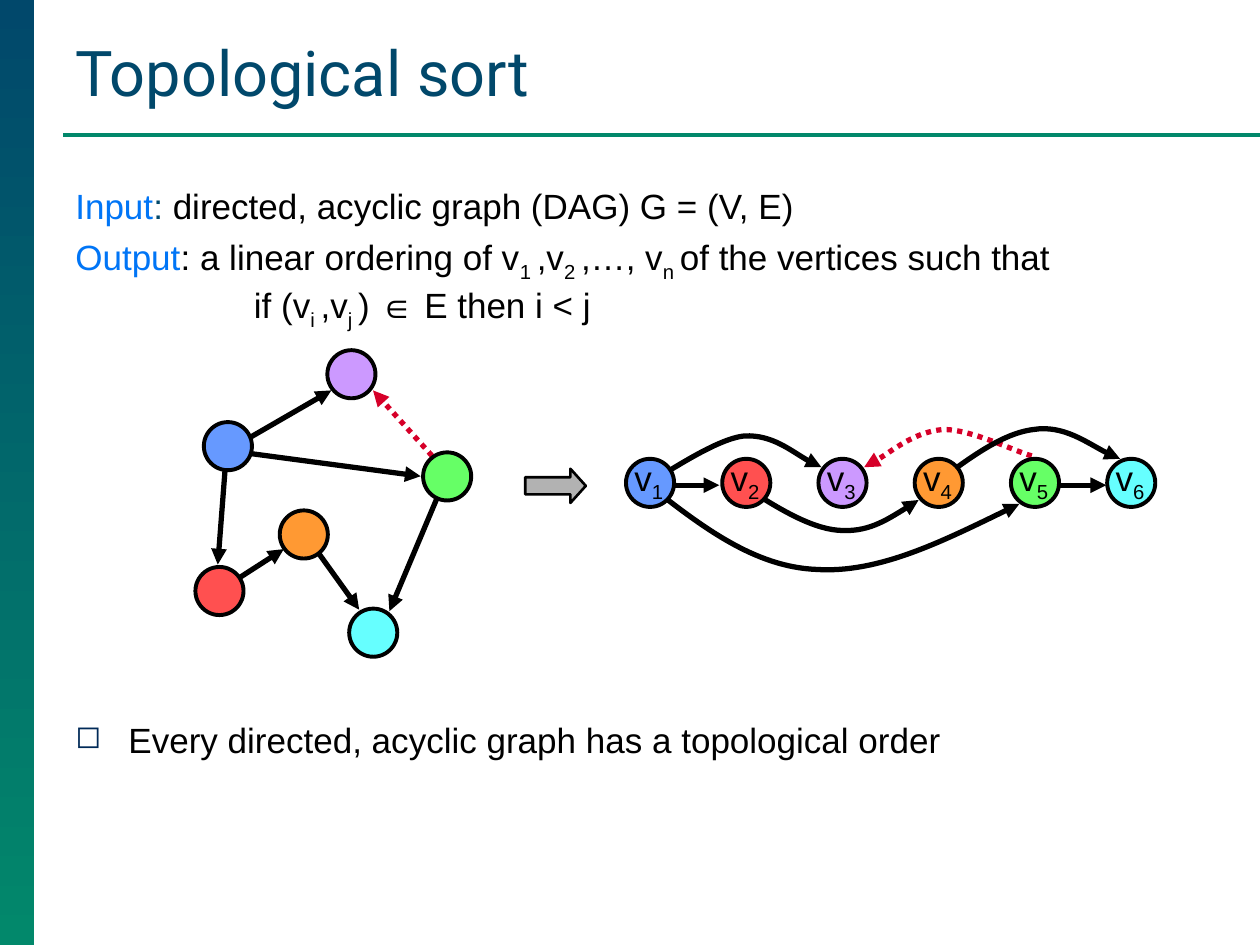
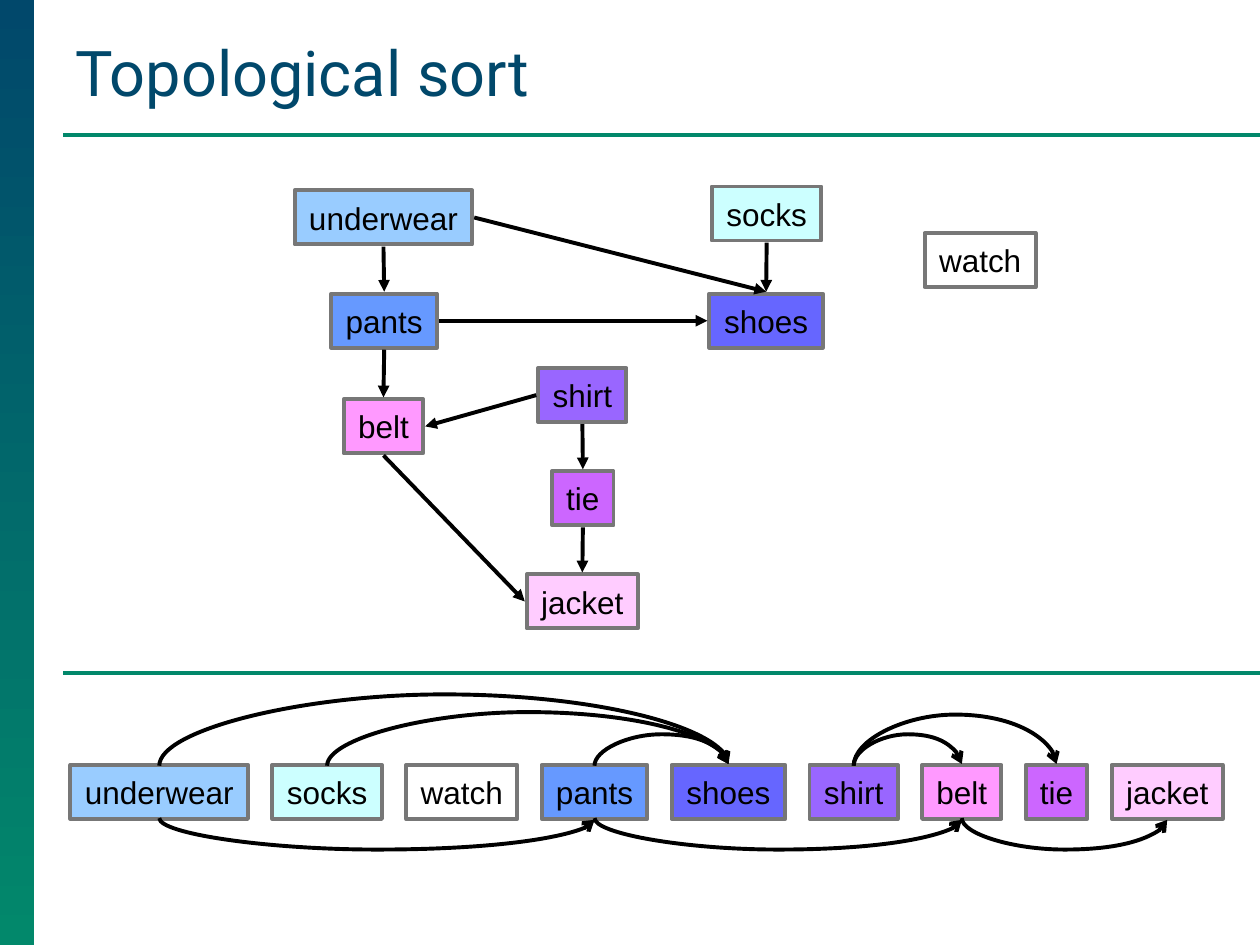
from dataclasses import dataclass

from lxml import etree
from pptx import Presentation
from pptx import util as u
from pptx.dml.color import RGBColor
from pptx.enum import dml, shapes, text
from pptx.oxml.ns import qn

Cm, Pt = u.Cm, u.Pt


@dataclass(frozen=True)
class Theme:
    navy: str = "01486B"
    green: str = "02886B"
    blue: str = "0075F6"
    bullet: str = "002A58"
    black: str = "000000"
    red: str = "D60029"
    gray: str = "B2B2B2"
    box_border: str = "777777"
    title_font: str = "Roboto"
    body_font: str = "Arial"
    title_size: int = 36
    body_size: int = 20
    box_size: int = 18
    thin: float = 2.25
    thick: float = 3


T = Theme()

NODE = 0.97
BOX_HEIGHT = 1.09

# Vertices in topological order: fill, left and top in the unsorted graph
VERTICES = [
    ("6699FF", 4.11, 8.51), ("FF5050", 3.94, 11.43), ("CC99FF", 6.6, 7.06),
    ("FF9933", 5.64, 10.29), ("66FF66", 8.53, 9.12), ("66FFFF", 7.04, 12.27),
]
GRAPH_EDGES = [
    (4.57, 9.04, 4.39, 11.38), (4.37, 11.94, 5.72, 11.07),
    (6.17, 10.8, 7.24, 12.29), (8.92, 9.78, 7.85, 12.32),
    (4.65, 9.09, 8.48, 9.6), (4.57, 9.09, 6.68, 7.87),
]
CYCLE_EDGE = (8.71, 9.19, 7.52, 7.87)
ORDER_EDGES = [(13.13, 9.78, 14.5, 9.78), (20.93, 9.78, 22.3, 9.78)]
ORDER_CURVES = [
    [(15.04, 9.83), (15.67, 10.24), (16.33, 10.64), (16.89, 10.69),
     (17.48, 10.74), (18.01, 10.41), (18.52, 10.08)],
    [(18.87, 9.73), (19.53, 9.25), (20.19, 8.74), (20.83, 8.66),
     (21.44, 8.56), (22.2, 9.12), (22.58, 9.25)],
    [(13.08, 9.78), (14.15, 10.62), (15.21, 11.43), (16.46, 11.48),
     (17.7, 11.56), (19.13, 10.85), (20.55, 10.16)],
    [(13.16, 9.68), (13.46, 9.53), (14.45, 8.84), (15.01, 8.79),
     (15.57, 8.76), (16.23, 9.3), (16.56, 9.42)],
]
CYCLE_CURVE = [(20.8, 9.19), (20.5, 9.12), (19.56, 8.64), (19, 8.66),
               (18.44, 8.71), (17.75, 9.27), (17.42, 9.42)]

# Garments in topological order: fill, width, left and top in the graph
GARMENTS = {
    "underwear": ("99CCFF", 3.58, 5.94, 3.84),
    "socks": ("CCFFFF", 2.21, 14.35, 3.76),
    "watch": ("FFFFFF", 2.24, 18.64, 4.7),
    "pants": ("6699FF", 2.13, 6.68, 5.92),
    "shoes": ("6666FF", 2.29, 14.3, 5.92),
    "shirt": ("9966FF", 1.78, 10.85, 7.42),
    "belt": ("FF99FF", 1.6, 6.93, 8.05),
    "tie": ("CC66FF", 1.24, 11.13, 9.5),
    "jacket": ("FFCCFF", 2.24, 10.62, 11.58),
}
DEPENDENCIES = [
    ("underwear", "right", "shoes", "top"), ("socks", "bottom", "shoes", "top"),
    ("underwear", "bottom", "pants", "top"), ("pants", "bottom", "belt", "top"),
    ("shirt", "left", "belt", "right"), ("shirt", "bottom", "tie", "top"),
    ("tie", "bottom", "jacket", "top"), ("belt", "bottom", "jacket", "left"),
    ("pants", "right", "shoes", "left"),
]
# Arcs over and under the sorted row: from, to, side, height
ARCS = [
    ("socks", "shoes", "top", 1.09), ("underwear", "pants", "bottom", 0.64),
    ("underwear", "shoes", "top", 1.45), ("pants", "shoes", "top", 0.64),
    ("pants", "belt", "bottom", 0.64), ("shirt", "tie", "top", 1.04),
    ("shirt", "belt", "top", 0.64), ("belt", "jacket", "bottom", 0.64),
]


def rgb(color):
    return RGBColor.from_string(color)


def stroke(line, color, width, head=None, dotted=False):
    line.color.rgb = rgb(color)
    line.width = Pt(width)
    if dotted:
        line.dash_style = dml.MSO_LINE.ROUND_DOT
    if head:
        ln = line._get_or_add_ln()
        etree.SubElement(ln, qn("a:tailEnd"), type=head)


def add_run(paragraph, words, color=T.black, size=T.body_size,
            font=T.body_font, subscript=False):
    run = paragraph.add_run()
    run.text = words
    run.font.size = Pt(size)
    run.font.name = font
    run.font.color.rgb = rgb(color)
    if subscript:
        run._r.get_or_add_rPr().set("baseline", "-25000")


def add_mixed(paragraph, pieces):
    """Add plain and subscript runs in turn, starting with a plain one."""
    for index, piece in enumerate(pieces):
        add_run(paragraph, piece, subscript=index % 2 == 1)


def text_frame(slide, left, top, width, height, wrap=True):
    box = slide.shapes.add_textbox(Cm(left), Cm(top), Cm(width), Cm(height))
    box.text_frame.word_wrap = wrap
    return box.text_frame


def indent(paragraph, left, first=0):
    properties = paragraph._p.get_or_add_pPr()
    properties.set("marL", str(Cm(left)))
    properties.set("indent", str(Cm(first)))
    return properties


def add_bullet(paragraph):
    properties = indent(paragraph, 1.07, -1.07)
    color = etree.SubElement(properties, qn("a:buClr"))
    etree.SubElement(color, qn("a:srgbClr"), val=T.bullet)
    etree.SubElement(properties, qn("a:buSzPct"), val="90000")
    etree.SubElement(properties, qn("a:buChar"), char="◻")


def add_solid(slide, kind, left, top, width, height, fill, border, weight):
    solid = slide.shapes.add_shape(kind, Cm(left), Cm(top), Cm(width), Cm(height))
    solid.shadow.inherit = False
    solid.fill.solid()
    solid.fill.fore_color.rgb = rgb(fill)
    stroke(solid.line, border, weight)
    return solid


def add_node(slide, left, top, fill):
    add_solid(slide, shapes.MSO_SHAPE.OVAL, left, top, NODE, NODE,
              fill, T.black, T.thin)


def add_garment(slide, name, left, top):
    fill, width = GARMENTS[name][:2]
    box = add_solid(slide, shapes.MSO_SHAPE.RECTANGLE, left, top, width,
                    BOX_HEIGHT, fill, T.box_border, T.thin)
    frame = box.text_frame
    frame.word_wrap = False
    frame.vertical_anchor = text.MSO_ANCHOR.MIDDLE
    frame.paragraphs[0].alignment = text.PP_ALIGN.CENTER
    add_run(frame.paragraphs[0], name, size=T.box_size)
    return box


def add_line(slide, ends, color, width, head=None, dotted=False,
             kind=shapes.MSO_CONNECTOR.STRAIGHT):
    line = slide.shapes.add_connector(kind, *ends)
    etree.SubElement(line._element.spPr, qn("a:effectLst"))
    stroke(line.line, color, width, head, dotted)
    return line


def add_edge(slide, ends, color=T.black, dotted=False):
    add_line(slide, map(Cm, ends), color, T.thick, "triangle", dotted)


def add_curve(slide, points, color=T.black, dotted=False):
    """Draw an arrow along two cubic Bézier pieces."""
    start, *rest = [(Cm(x), Cm(y)) for x, y in points]
    builder = slide.shapes.build_freeform(*start)
    builder.add_line_segments(rest, close=False)
    curve = builder.convert_to_shape()
    segments = list(curve._element.iter(qn("a:lnTo")))
    outline = segments[0].getparent()
    for first in range(0, len(segments), 3):
        cubic = etree.SubElement(outline, qn("a:cubicBezTo"))
        for segment in segments[first:first + 3]:
            cubic.append(segment[0])
            outline.remove(segment)
    curve.shadow.inherit = False
    curve.fill.background()
    stroke(curve.line, color, T.thick, "triangle", dotted)


def anchor(box, side, gap=Cm(0.04)):
    """Return the point just outside the middle of a side of the box."""
    middle_x, middle_y = box.left + box.width // 2, box.top + box.height // 2
    return {
        "left": (box.left - gap, middle_y),
        "right": (box.left + box.width + gap, middle_y),
        "top": (middle_x, box.top - gap),
        "bottom": (middle_x, box.top + box.height + gap),
    }[side]


def add_arc(slide, source, target, side, height):
    """Join two boxes of the row by a curved connector turned on its side."""
    start_x, y = anchor(source, side, 0)
    end_x, _ = anchor(target, side, 0)
    depth, span = Pt(1), end_x - start_x
    left, top = (start_x + end_x - depth) // 2, y - span // 2
    arc = add_line(slide, (left, top, left + depth, top + span), T.black, T.thin,
                   "arrow", kind=shapes.MSO_CONNECTOR.CURVE)
    properties = arc._element.spPr
    frame = properties.find(qn("a:xfrm"))
    frame.set("rot", str((90 if side == "top" else 270) * 60000))
    frame.set("flipH", "1")
    if side == "top":
        frame.set("flipV", "1")
    guides = properties.find(qn("a:prstGeom")).get_or_add_avLst()
    etree.SubElement(guides, qn("a:gd"), name="adj1",
                     fmla=f"val {round(Cm(height) / depth * 100000)}")


def add_rule(slide, y):
    add_line(slide, map(Cm, (1.27, y, 25.4, y)), T.green, T.thin)


def add_titled_slide(deck, title):
    slide = deck.slides.add_slide(deck.slide_layouts[6])
    band = slide.shapes.add_shape(shapes.MSO_SHAPE.RECTANGLE, 0, 0,
                                  Cm(0.69), deck.slide_height)
    band.shadow.inherit = False
    band.line.fill.background()
    band.fill.gradient()
    band.fill.gradient_angle = 270
    for stop, color in zip(band.fill.gradient_stops, (T.navy, T.green)):
        stop.color.rgb = rgb(color)
    add_rule(slide, 2.72)
    frame = text_frame(slide, 1.27, 0.53, 23.57, 1.8)
    frame.vertical_anchor = text.MSO_ANCHOR.BOTTOM
    add_run(frame.paragraphs[0], title, T.navy, T.title_size, T.title_font)
    return slide


def add_definition(slide):
    frame = text_frame(slide, 1.27, 3.6, 22.66, 3.1)
    given = frame.paragraphs[0]
    add_run(given, "Input", T.blue)
    add_run(given, ":", T.navy)
    add_run(given, " directed, acyclic graph (DAG) G = (V, E)")
    result = frame.add_paragraph()
    result.space_before = Pt(5)
    add_run(result, "Output", T.blue)
    add_mixed(result, [": a linear ordering of v", "1 ", ",v", "2 ", ",…, v",
                       "n ", "of the vertices such that"])
    condition = frame.add_paragraph()
    indent(condition, 3.6)
    add_mixed(condition, ["if (v", "i ", ",v", "j ", ") ∈ E then i < j"])


def add_vertex_slide(deck):
    slide = add_titled_slide(deck, "Topological sort")
    add_definition(slide)
    add_curve(slide, CYCLE_CURVE, T.red, dotted=True)
    add_edge(slide, CYCLE_EDGE, T.red, dotted=True)
    for ends in GRAPH_EDGES + ORDER_EDGES:
        add_edge(slide, ends)
    for points in ORDER_CURVES:
        add_curve(slide, points)
    becomes = add_solid(slide, shapes.MSO_SHAPE.RIGHT_ARROW, 10.59, 9.45,
                        1.22, 0.69, T.gray, T.black, 1.5)
    becomes.adjustments[1] = 0.45
    for index, (fill, left, top) in enumerate(VERTICES):
        add_node(slide, left, top, fill)
        order_left = 12.62 + 1.94 * index
        add_node(slide, order_left, 9.25, fill)
        label = text_frame(slide, order_left - 0.08, 9.07, 1.12, 1.09, wrap=False)
        add_mixed(label.paragraphs[0], ["v", str(index + 1)])
    claim = text_frame(slide, 1.27, 14.35, 22.66, 1.1).paragraphs[0]
    add_bullet(claim)
    add_run(claim, "Every directed, acyclic graph has a topological order")


def add_garment_slide(deck):
    slide = add_titled_slide(deck, "Topological sort")
    graph = {name: add_garment(slide, name, left, top)
             for name, (_, _, left, top) in GARMENTS.items()}
    for source, exit_side, target, entry_side in DEPENDENCIES:
        ends = anchor(graph[source], exit_side) + anchor(graph[target], entry_side)
        add_line(slide, ends, T.black, T.thin, "triangle")
    add_rule(slide, 13.56)
    row, left = {}, 1.42
    for name, (_, width, _, _) in GARMENTS.items():
        row[name] = add_garment(slide, name, left, 15.42)
        left += width + 0.49
    for source, target, side, height in ARCS:
        add_arc(slide, row[source], row[target], side, height)


def main():
    deck = Presentation()
    deck.slide_width, deck.slide_height = Cm(25.4), Cm(19.05)
    add_vertex_slide(deck)
    add_garment_slide(deck)
    deck.save("out.pptx")


if __name__ == "__main__":
    main()
